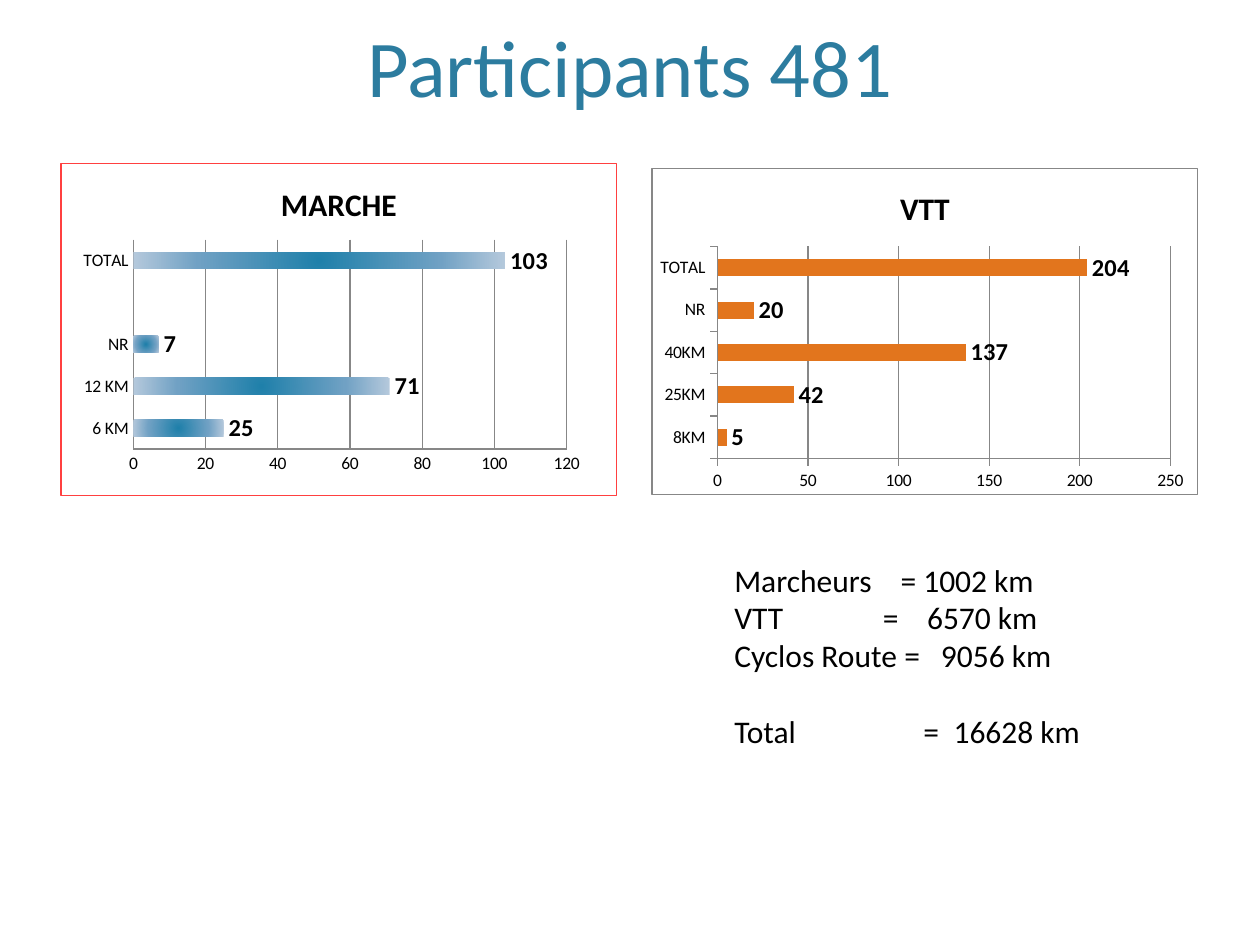
from pptx import Presentation, util as u
from pptx.chart.data import CategoryChartData
from pptx.dml.color import RGBColor
from pptx.enum import chart as ch, text
from pptx.oxml import parse_xml
from pptx.oxml.ns import nsdecls, qn

FONT = "Calibri"
BLACK = RGBColor(0x00, 0x00, 0x00)
BLUE = RGBColor(0x2C, 0x7C, 0x9F)
CENTRE_BLUE = RGBColor(0x1F, 0x80, 0xAA)
MIDDLE_BLUE = RGBColor(0x70, 0xA1, 0xC4)
PALE_BLUE = RGBColor(0xB5, 0xC9, 0xDC)
ORANGE = RGBColor(0xE2, 0x75, 0x1D)
RED = RGBColor(0xFF, 0x40, 0x40)
GREY = RGBColor(0x87, 0x87, 0x87)


def add_span(para, words, size, color):
    span = para.add_run()
    span.text = words
    span.font.name = FONT
    span.font.size = u.Pt(size)
    span.font.color.rgb = color


def add_text_box(page, box):
    frame = page.shapes.add_textbox(*map(u.Inches, box)).text_frame
    frame.word_wrap = True
    return frame


def add_title(page, box):
    frame = add_text_box(page, box)
    frame.vertical_anchor = text.MSO_ANCHOR.BOTTOM
    para = frame.paragraphs[0]
    para.alignment = text.PP_ALIGN.CENTER
    add_span(para, "Participants 481", 46, BLUE)


def set_frame(chart, border, layout):
    """Outline the whole chart and fix its inner plot area (x, y, w, h as shares)."""
    chart._chartSpace.find(qn("c:chart")).addnext(parse_xml(
        f'<c:spPr {nsdecls("c", "a")}><a:noFill/><a:ln w="9525"><a:solidFill>'
        f'<a:srgbClr val="{border}"/></a:solidFill></a:ln></c:spPr>'))
    plot_area = chart._chartSpace.chart.plotArea
    for old in plot_area.findall(qn("c:layout")):
        plot_area.remove(old)
    modes = '<c:xMode val="edge"/><c:yMode val="edge"/>'
    sizes = "".join(f'<c:{tag} val="{share}"/>' for tag, share in zip("xywh", layout))
    plot_area.insert(0, parse_xml(
        f'<c:layout {nsdecls("c")}><c:manualLayout><c:layoutTarget val="inner"/>'
        f'{modes}{sizes}</c:manualLayout></c:layout>'))


def fill_from_centre(series, colors):
    """Shade each bar from its centre outwards."""
    stops = "".join(
        f'<a:gs pos="{pos}"><a:srgbClr val="{color}"/></a:gs>'
        for pos, color in zip((0, 65000, 100000), colors))
    series.format.fill.background()
    properties = series._element.find(qn("c:spPr"))
    properties.replace(properties.find(qn("a:noFill")), parse_xml(
        f'<a:gradFill {nsdecls("a")} rotWithShape="1"><a:gsLst>{stops}</a:gsLst>'
        '<a:path path="circle"><a:fillToRect l="50000" t="50000" r="50000" b="50000"/>'
        '</a:path></a:gradFill>'))


def add_bar_chart(page, box, name, values, top, step, ticks, border, layout):
    data = CategoryChartData()
    data.categories = list(values)
    data.add_series(name, list(values.values()))
    chart = page.shapes.add_chart(
        ch.XL_CHART_TYPE.BAR_CLUSTERED, *map(u.Inches, box), data).chart
    chart.font.name = FONT
    chart.font.size = u.Pt(10)
    chart.font.color.rgb = BLACK
    chart.has_legend = False
    chart.has_title = True
    para = chart.chart_title.text_frame.paragraphs[0]
    add_span(para, name, 18, BLACK)
    para.runs[0].font.bold = True

    for axis in (chart.category_axis, chart.value_axis):
        axis.major_tick_mark = ticks
        axis.minor_tick_mark = ch.XL_TICK_MARK.NONE
        axis.format.line.color.rgb = GREY
        axis.format.line.width = u.Pt(0.75)
    scale = chart.value_axis
    scale.minimum_scale, scale.maximum_scale, scale.major_unit = 0, top, step
    scale.has_major_gridlines = True
    scale.major_gridlines.format.line.color.rgb = GREY
    scale.major_gridlines.format.line.width = u.Pt(0.75)

    plot = chart.plots[0]
    plot.gap_width = 150
    plot.vary_by_categories = False
    plot.has_data_labels = True
    labels = plot.data_labels
    labels.show_value = True
    labels.position = ch.XL_LABEL_POSITION.OUTSIDE_END
    labels.font.name = FONT
    labels.font.size = u.Pt(14)
    labels.font.bold = True
    labels.font.color.rgb = BLACK
    set_frame(chart, border, layout)
    return plot.series[0]


def add_walk_chart(page, box):
    values = {"6 KM": 25, "12 KM": 71, "NR": 7, "": None, "TOTAL": 103}
    series = add_bar_chart(page, box, "MARCHE", values, 120, 20,
                           ch.XL_TICK_MARK.NONE, RED, (0.13, 0.23, 0.78, 0.63))
    fill_from_centre(series, (CENTRE_BLUE, MIDDLE_BLUE, PALE_BLUE))


def add_bike_chart(page, box):
    values = {"8KM": 5, "25KM": 42, "40KM": 137, "NR": 20, "TOTAL": 204}
    series = add_bar_chart(page, box, "VTT", values, 250, 50,
                           ch.XL_TICK_MARK.OUTSIDE, GREY, (0.12, 0.24, 0.83, 0.65))
    series.format.fill.solid()
    series.format.fill.fore_color.rgb = ORANGE


def add_distances(page, box):
    # label, distance, then the tab stops of the equals sign and the distance
    rows = [
        ("Marcheurs", "1002 km", 1.32, 1.5),
        ("VTT", "6570 km", 1.18, 1.53),
        ("Cyclos Route", "9056 km", 1.35, 1.64),
        ("Total", "16628 km", 1.5, 1.74),
    ]
    frame = add_text_box(page, box)
    for index, (label, distance, *stops) in enumerate(rows):
        para = frame.add_paragraph() if index else frame.paragraphs[0]
        if label == "Total":
            para.space_before = u.Pt(22)
        tabs = "".join(f'<a:tab pos="{u.Inches(stop)}" algn="l"/>' for stop in stops)
        para._p.get_or_add_pPr().append(
            parse_xml(f'<a:tabLst {nsdecls("a")}>{tabs}</a:tabLst>'))
        add_span(para, f"{label}\t=\t{distance}", 18, BLACK)


def main():
    deck = Presentation()
    deck.slide_width, deck.slide_height = u.Inches(10), u.Inches(7.5)
    page = deck.slides.add_slide(deck.slide_layouts[6])
    add_title(page, (0.6, 0.12, 8.8, 0.83))
    add_walk_chart(page, (0.48, 1.29, 4.42, 2.65))
    add_bike_chart(page, (5.17, 1.33, 4.34, 2.6))
    add_distances(page, (5.73, 4.4, 3.67, 1.62))
    deck.save("out.pptx")


if __name__ == "__main__":
    main()
